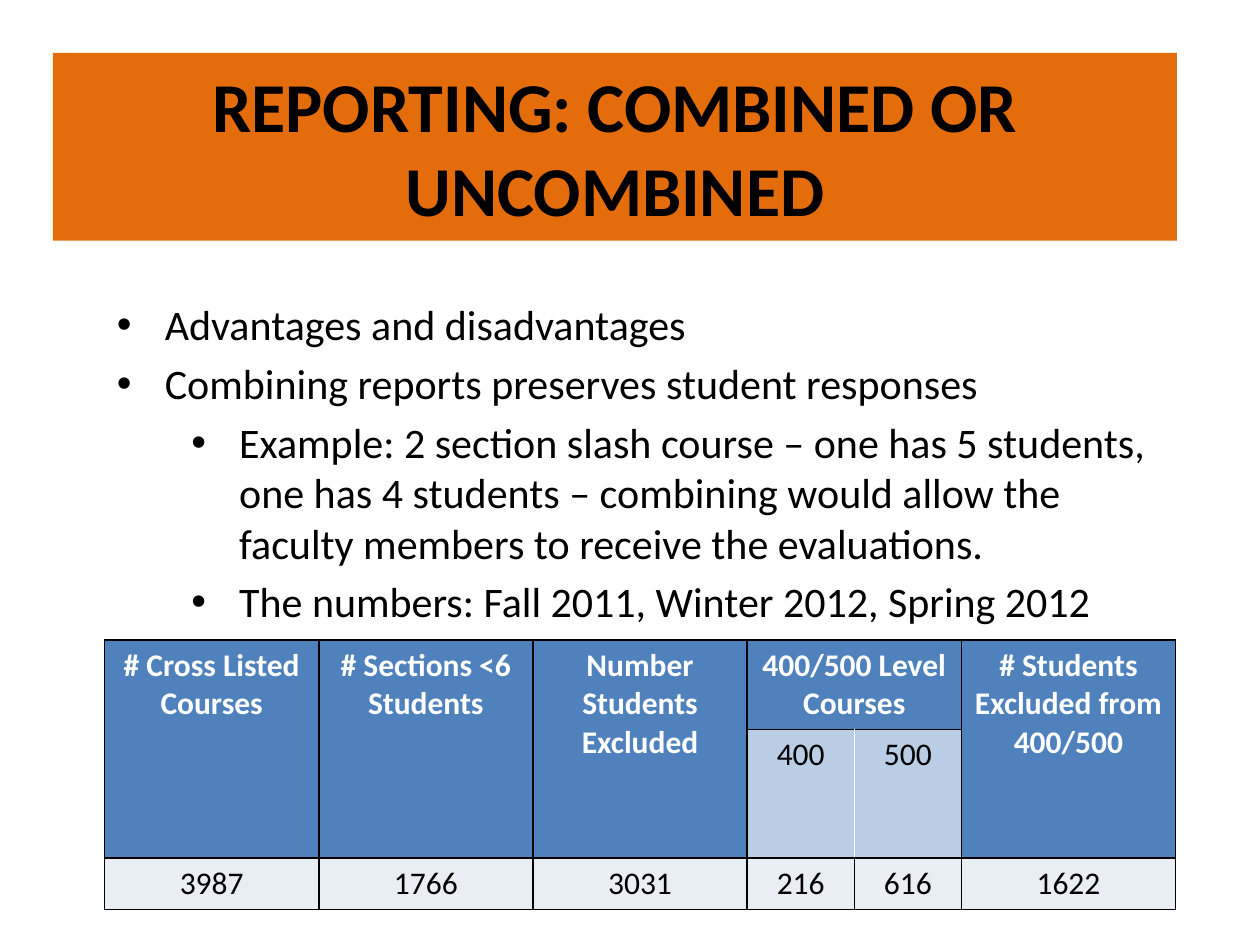
from lxml.etree import SubElement
from pptx import Presentation
from pptx.dml.color import RGBColor
from pptx.enum.text import MSO_ANCHOR, PP_ALIGN
from pptx.oxml.ns import qn
from pptx.util import Inches, Pt

ORANGE = RGBColor(0xE4, 0x6C, 0x0A)
BLUE = RGBColor(0x4F, 0x81, 0xBD)
LIGHT_BLUE = RGBColor(0xB9, 0xCD, 0xE5)
PALE = RGBColor(0xE9, 0xED, 0xF4)
BLACK = RGBColor(0, 0, 0)
WHITE = RGBColor(0xFF, 0xFF, 0xFF)

TITLE_FONT = {"name": "Calibri", "size": Pt(40), "bold": True}
BODY_FONT = {"name": "Calibri", "size": Pt(24)}
HEAD_FONT = {"name": "Calibri", "size": Pt(18), "bold": True}
CELL_FONT = {"name": "Calibri", "size": Pt(18), "bold": False}

POINTS = [
    (0, "Advantages and disadvantages"),
    (0, "Combining reports preserves student responses"),
    (1, "Example: 2 section slash course – one has 5 students, one has 4 students "
        "– combining would allow the faculty members to receive the evaluations."),
    (1, "The numbers: Fall 2011, Winter 2012, Spring 2012"),
]
TEXT_INDENTS = [0.38, 0.97]
HANGING = 0.38

COLUMN_WIDTHS = [1.7, 1.7, 1.7, 0.85, 0.85, 1.7]
ROW_HEIGHTS = [0.71, 1.02, 0.41]
HEADINGS = ["# Cross Listed Courses", "# Sections <6 Students",
            "Number Students Excluded", "400/500 Level Courses", "",
            "# Students Excluded from 400/500"]
LEVELS = ["", "", "", "400", "500", ""]
COUNTS = ["3987", "1766", "3031", "216", "616", "1622"]
LEVEL_COLUMNS = (3, 4)


def style_font(font, styles, color):
    for key, value in styles.items():
        setattr(font, key, value)
    font.color.rgb = color


def add_title(slide, left, top, width, height):
    title = slide.shapes.title
    title.left, title.top, title.width, title.height = map(
        Inches, (left, top, width, height))
    title.fill.solid()
    title.fill.fore_color.rgb = ORANGE
    frame = title.text_frame
    frame.text = "REPORTING: COMBINED OR UNCOMBINED"
    frame.word_wrap = True
    frame.vertical_anchor = MSO_ANCHOR.MIDDLE
    heading = frame.paragraphs[0]
    heading.alignment = PP_ALIGN.CENTER
    style_font(heading.runs[0].font, TITLE_FONT, BLACK)


def add_points(slide, left, top, width, height):
    frame = slide.shapes.add_textbox(
        *map(Inches, (left, top, width, height))).text_frame
    frame.word_wrap = True
    frame.vertical_anchor = MSO_ANCHOR.BOTTOM
    for index, (level, text) in enumerate(POINTS):
        point = frame.paragraphs[0] if index == 0 else frame.add_paragraph()
        point.level = level
        point.space_before = Pt(4.8)
        run = point.add_run()
        run.text = text
        style_font(run.font, BODY_FONT, BLACK)
        properties = point._p.get_or_add_pPr()
        properties.set("marL", str(Inches(TEXT_INDENTS[level])))
        properties.set("indent", str(-Inches(HANGING)))
        SubElement(properties, qn("a:buFont"), typeface="Arial")
        SubElement(properties, qn("a:buChar"), char="•")


def set_borders(cell, **colors):
    """Draw 1 pt black borders, except on sides given another colour."""
    properties = cell._tc.get_or_add_tcPr()
    for index, side in enumerate(("lnL", "lnR", "lnT", "lnB")):
        line = properties.makeelement(qn(f"a:{side}"), {"w": str(Pt(1))})
        fill = SubElement(line, qn("a:solidFill"))
        SubElement(fill, qn("a:srgbClr"), val=str(colors.get(side, BLACK)))
        properties.insert(index, line)


def fill_cell(cell, text, styles, font_color, fill_color):
    cell.fill.solid()
    cell.fill.fore_color.rgb = fill_color
    if text:
        cell.text = text
        paragraph = cell.text_frame.paragraphs[0]
        paragraph.alignment = PP_ALIGN.CENTER
        style_font(paragraph.runs[0].font, styles, font_color)


def add_counts_table(slide, left, top):
    table = slide.shapes.add_table(
        len(ROW_HEIGHTS), len(COLUMN_WIDTHS), Inches(left), Inches(top),
        Inches(sum(COLUMN_WIDTHS)), Inches(sum(ROW_HEIGHTS))).table
    for row, height in zip(table.rows, ROW_HEIGHTS):
        row.height = Inches(height)

    first_level, last_level = LEVEL_COLUMNS
    for col, width in enumerate(COLUMN_WIDTHS):
        table.columns[col].width = Inches(width)
        heading, level, count = (table.cell(row, col) for row in range(3))
        fill_cell(heading, HEADINGS[col], HEAD_FONT, WHITE, BLUE)
        fill_cell(level, LEVELS[col], CELL_FONT, BLACK,
                  LIGHT_BLUE if col in LEVEL_COLUMNS else BLUE)
        fill_cell(count, COUNTS[col], CELL_FONT, BLACK, PALE)
        inner_side = {first_level: {"lnR": WHITE}, last_level: {"lnL": WHITE}}
        set_borders(heading)
        set_borders(level, **inner_side.get(col, {}))
        set_borders(count)
        if col not in LEVEL_COLUMNS:
            heading.merge(level)
    table.cell(0, first_level).merge(table.cell(0, last_level))


def main():
    deck = Presentation()
    deck.slide_width, deck.slide_height = Inches(10), Inches(7.5)
    slide = deck.slides.add_slide(deck.slide_layouts.get_by_name("Title Only"))
    add_title(slide, 0.42, 0.42, 8.92, 1.49)
    add_points(slide, 0.83, 2.3, 8.5, 2.72)
    add_counts_table(slide, 0.83, 5.08)
    deck.save("out.pptx")


if __name__ == "__main__":
    main()
